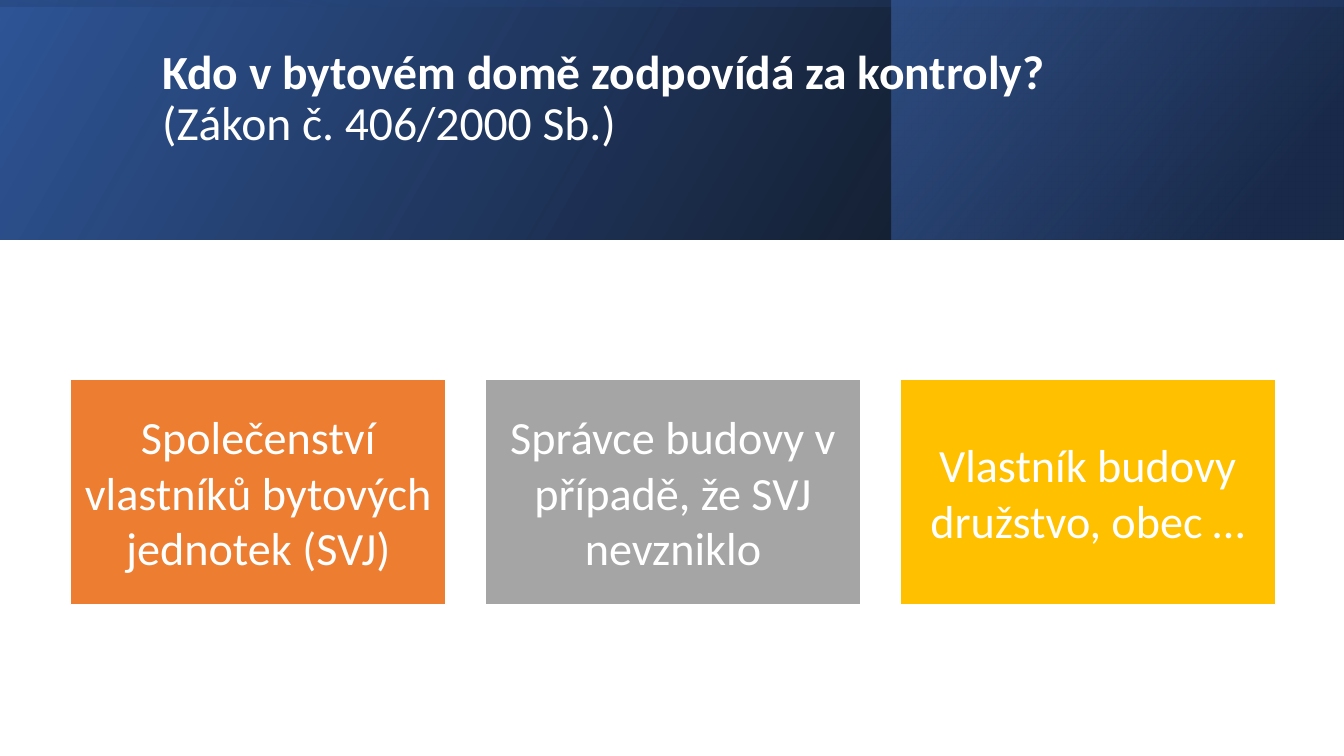
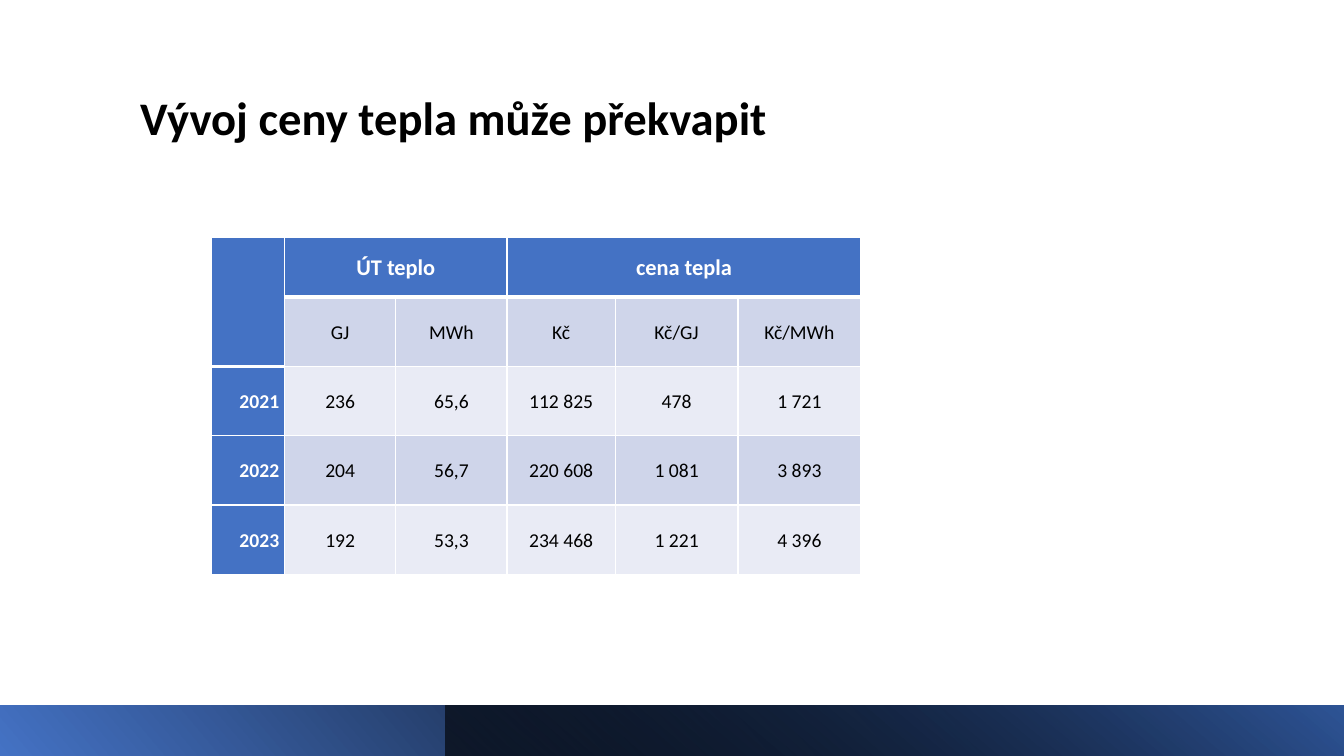
from dataclasses import dataclass

from lxml.etree import SubElement
from pptx import Presentation
from pptx.dml.color import RGBColor
from pptx.enum.shapes import MSO_SHAPE as Preset
from pptx.enum.text import MSO_ANCHOR as Anchor, PP_ALIGN as Align
from pptx.oxml.ns import qn
from pptx.slide import Slide
from pptx.table import _Cell as Cell
from pptx.text.text import TextFrame
from pptx.util import Emu, Pt

EMU_PER_PX = 9525


@dataclass(frozen=True)
class Theme:
    font: str = "Calibri"
    white: str = "FFFFFF"
    black: str = "000000"
    blue: str = "4472C4"
    deep_blue: str = "2F5597"
    navy: str = "203864"
    orange: str = "ED7D31"
    gray: str = "A5A5A5"
    gold: str = "FFC000"
    dark_band: str = "CFD5EA"
    light_band: str = "E9EBF5"
    header_title_size: float = 34
    title_size: float = 33.3
    card_size: float = 33
    table_head_size: float = 16
    table_size: float = 14
    title_spacing: float = 0.9
    table_spacing: float = 1.07


THEME = Theme()


@dataclass(frozen=True)
class Box:
    left: int
    top: int
    width: int
    height: int

    def emu(self) -> tuple[Emu, Emu, Emu, Emu]:
        return px(self.left), px(self.top), px(self.width), px(self.height)


@dataclass(frozen=True)
class Stop:
    position: float
    color: str
    opacity: int = 100


@dataclass(frozen=True)
class Band:
    box: Box
    start: Stop
    end: Stop
    angle: int
    rotation: int = 0


@dataclass(frozen=True)
class Line:
    text: str
    bold: bool = False


@dataclass(frozen=True)
class Style:
    size: float
    color: str
    align: Align = Align.LEFT
    spacing: float = 1.0


@dataclass(frozen=True)
class Card:
    text: str
    color: str


HEADER_BANDS = (
    Band(Box(0, 0, 1280, 228), Stop(0, THEME.black, 96), Stop(1, THEME.deep_blue), 330),
    Band(Box(849, 0, 430, 228), Stop(0.19, THEME.navy, 68), Stop(1, THEME.blue, 48), 320),
    Band(Box(526, -526, 228, 1280), Stop(0.23, THEME.deep_blue, 16),
         Stop(0.99, THEME.black, 45), 350, 270),
)
FOOTER_BANDS = (
    Band(Box(0, 672, 1280, 48), Stop(0, THEME.blue), Stop(0.78, THEME.black), 40, 180),
    Band(Box(424, 672, 856, 48), Stop(0, THEME.black, 63), Stop(1, THEME.deep_blue), 230),
)

CARDS = (
    Card("Společenství vlastníků bytových jednotek (SVJ)", THEME.orange),
    Card("Správce budovy v případě, že SVJ nevzniklo", THEME.gray),
    Card("Vlastník budovy družstvo, obec …", THEME.gold),
)
FIRST_CARD = Box(67, 361, 358, 215)
CARD_GAP = 37
CARD_INSET = 13

PRICE_ROWS = (
    ("", "ÚT teplo", "", "cena tepla", "", ""),
    ("", "GJ", "MWh", "Kč", "Kč/GJ", "Kč/MWh"),
    ("2021", "236", "65,6", "112 825", "478", "1 721"),
    ("2022", "204", "56,7", "220 608", "1 081", "3 893"),
    ("2023", "192", "53,3", "234 468", "1 221", "4 396"),
)
PRICE_MERGES = (((0, 0), (1, 0)), ((0, 1), (0, 2)), ((0, 3), (0, 5)))
PRICE_COLUMNS = (70, 106, 106, 103, 117, 117)
PRICE_HEIGHTS = (57, 66, 66, 66, 66)
PRICE_LEFT, PRICE_TOP = 201, 226
CELL_INSET = 5


def px(length: int) -> Emu:
    return Emu(length * EMU_PER_PX)


def rgb(color: str) -> RGBColor:
    return RGBColor.from_string(color)


def write(frame: TextFrame, lines: tuple[Line, ...], style: Style) -> None:
    for index, line in enumerate(lines):
        para = frame.add_paragraph() if index else frame.paragraphs[0]
        para.text = line.text
        para.alignment = style.align
        para.line_spacing = style.spacing
        para.font.name = THEME.font
        para.font.size = Pt(style.size)
        para.font.bold = line.bold
        para.font.color.rgb = rgb(style.color)


def add_title(page: Slide, box: Box, lines: tuple[Line, ...], style: Style,
              anchor: Anchor) -> None:
    frame = page.shapes.add_textbox(*box.emu()).text_frame
    frame.word_wrap = True
    frame.vertical_anchor = anchor
    write(frame, lines, style)


def add_band(page: Slide, band: Band) -> None:
    shape = page.shapes.add_shape(Preset.RECTANGLE, *band.box.emu())
    shape.shadow.inherit = False
    shape.line.fill.background()
    shape.rotation = band.rotation
    shape.element.spPr.find(qn("a:xfrm")).set("flipH", "1")
    shape.fill.gradient()
    shape.fill.gradient_angle = 360 - band.angle
    stops = (band.start, band.end)
    for target, stop in zip(shape.fill.gradient_stops, stops):
        target.position = stop.position
        target.color.rgb = rgb(stop.color)
    for color, stop in zip(shape.element.spPr.iter(qn("a:srgbClr")), stops):
        if stop.opacity < 100:
            SubElement(color, qn("a:alpha")).set("val", str(stop.opacity * 1000))


def add_card(page: Slide, box: Box, card: Card) -> None:
    shape = page.shapes.add_shape(Preset.RECTANGLE, *box.emu())
    shape.shadow.inherit = False
    shape.fill.solid()
    shape.fill.fore_color.rgb = rgb(card.color)
    shape.line.color.rgb = rgb(THEME.white)
    shape.line.width = Pt(1)
    frame = shape.text_frame
    frame.word_wrap = True
    frame.vertical_anchor = Anchor.MIDDLE
    frame.margin_left = frame.margin_right = px(CARD_INSET)
    frame.margin_top = frame.margin_bottom = px(CARD_INSET)
    write(frame, (Line(card.text),), Style(THEME.card_size, THEME.white, Align.CENTER))


def set_borders(cell: Cell, top: int, bottom: int) -> None:
    properties = cell._tc.get_or_add_tcPr()
    for side, width in (("L", 1), ("R", 1), ("T", top), ("B", bottom)):
        border = SubElement(properties, qn(f"a:ln{side}"))
        border.set("w", str(Pt(width)))
        fill = SubElement(border, qn("a:solidFill"))
        SubElement(fill, qn("a:srgbClr")).set("val", THEME.white)


def border_below(row: int, column: int) -> int:
    last_head_row = 1 if column == 0 else 0
    return 3 if row == last_head_row else 1


def fill_cell(cell: Cell, text: str, row: int, column: int) -> None:
    is_head = row == 0 or column == 0
    bottom_row = 1 if (row, column) == (0, 0) else row
    set_borders(cell, border_below(row - 1, column), border_below(bottom_row, column))
    band = THEME.dark_band if row % 2 else THEME.light_band
    cell.fill.solid()
    cell.fill.fore_color.rgb = rgb(THEME.blue if is_head else band)
    cell.vertical_anchor = Anchor.MIDDLE
    cell.margin_left = cell.margin_right = px(CELL_INSET)
    cell.margin_top = cell.margin_bottom = 0
    style = Style(
        THEME.table_head_size if row == 0 else THEME.table_size,
        THEME.white if is_head else THEME.black,
        Align.RIGHT if column == 0 else Align.CENTER,
        THEME.table_spacing,
    )
    write(cell.text_frame, (Line(text, is_head),), style)


def add_price_table(page: Slide) -> None:
    box = Box(PRICE_LEFT, PRICE_TOP, sum(PRICE_COLUMNS), sum(PRICE_HEIGHTS))
    table = page.shapes.add_table(len(PRICE_ROWS), len(PRICE_COLUMNS), *box.emu()).table
    for column, width in zip(table.columns, PRICE_COLUMNS):
        column.width = px(width)
    for row, height in zip(table.rows, PRICE_HEIGHTS):
        row.height = px(height)
    for row, texts in enumerate(PRICE_ROWS):
        for column, text in enumerate(texts):
            fill_cell(table.cell(row, column), text, row, column)
    for first, last in PRICE_MERGES:
        table.cell(*first).merge(table.cell(*last))


def build_responsibility(page: Slide) -> None:
    for band in HEADER_BANDS:
        add_band(page, band)
    lines = (Line("Kdo v bytovém domě zodpovídá za kontroly?", True),
             Line("(Zákon č. 406/2000 Sb.)"))
    style = Style(THEME.header_title_size, THEME.white, spacing=THEME.title_spacing)
    add_title(page, Box(145, 36, 1020, 118), lines, style, Anchor.MIDDLE)
    for index, card in enumerate(CARDS):
        left = FIRST_CARD.left + index * (FIRST_CARD.width + CARD_GAP)
        add_card(page, Box(left, FIRST_CARD.top, FIRST_CARD.width, FIRST_CARD.height), card)


def build_heat_prices(page: Slide) -> None:
    style = Style(THEME.title_size, THEME.black, spacing=THEME.title_spacing)
    lines = (Line("Vývoj ceny tepla může překvapit", True),)
    add_title(page, Box(124, 83, 1018, 60), lines, style, Anchor.BOTTOM)
    add_price_table(page)
    for band in FOOTER_BANDS:
        add_band(page, band)


def main() -> None:
    deck = Presentation()
    deck.slide_width, deck.slide_height = px(1280), px(720)
    for build in (build_responsibility, build_heat_prices):
        build(deck.slides.add_slide(deck.slide_layouts[6]))
    deck.save("out.pptx")


if __name__ == "__main__":
    main()
